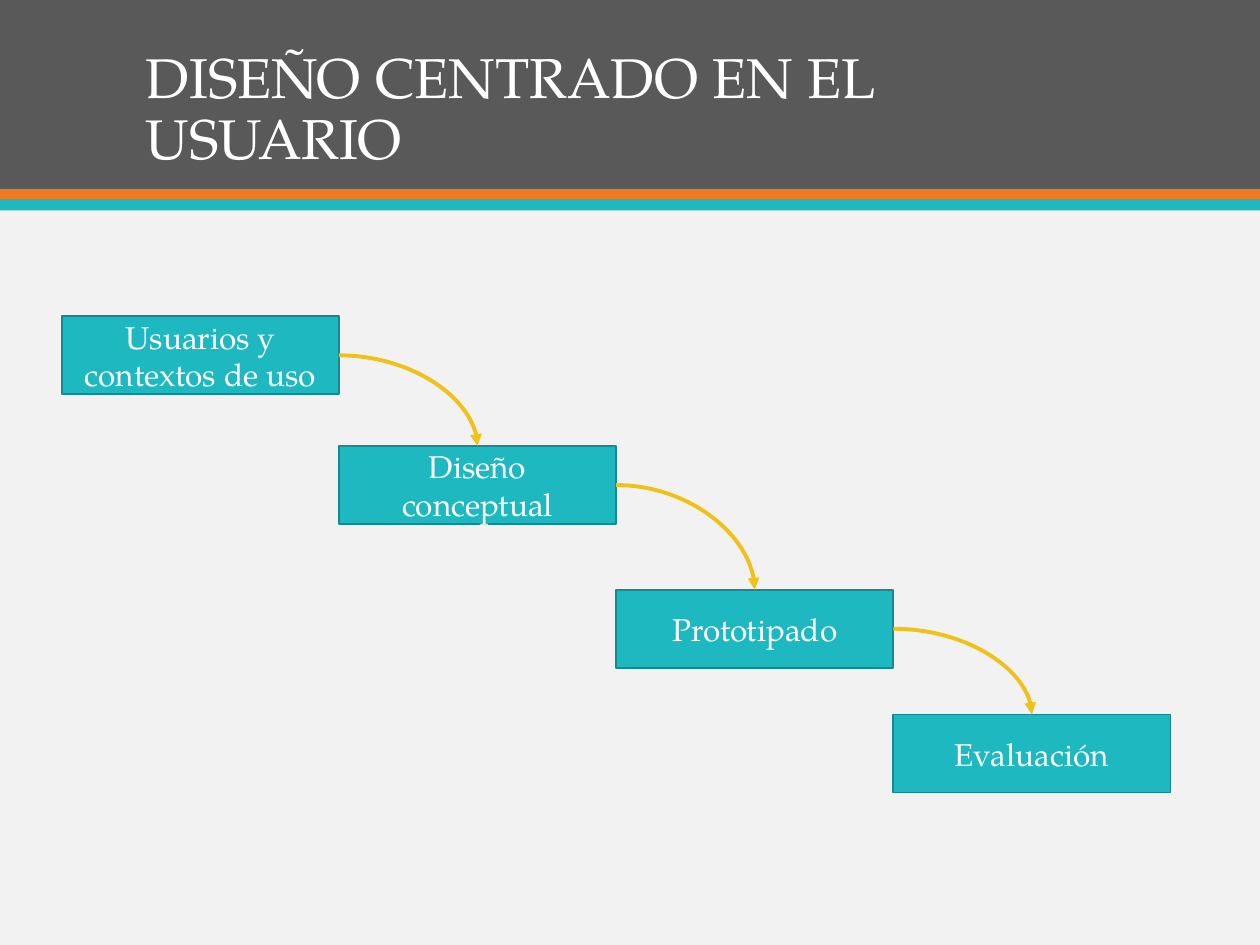
from dataclasses import dataclass
from itertools import pairwise

import pptx
import pptx.dml.color
import pptx.enum.shapes
import pptx.enum.text
import pptx.oxml.ns
import pptx.presentation
import pptx.util
from lxml import etree
from pptx.util import Inches

FONT = "TeX Gyre Pagella"
WHITE, GREY, ORANGE, TEAL = "FFFFFF", "595959", "EF7920", "1EB8C1"
DARK_TEAL, YELLOW, BACKGROUND = "16888F", "EFC119", "F2F2F2"
STEP_LEFT, STEP_WIDTH, STEP_HEIGHT = 0.49, 2.2, 0.62


@dataclass
class Band:
    top: float
    height: float
    color: str


@dataclass
class Step:
    text: str
    top: float


BANDS = [Band(0, 1.5, GREY), Band(1.5, 0.09, ORANGE), Band(1.58, 0.09, TEAL)]
STEPS = [
    Step("Usuarios y contextos de uso", 2.51),
    Step("Diseño conceptual", 3.54),
    Step("Prototipado", 4.68),
    Step("Evaluación", 5.67),
]


def rgb(color: str) -> pptx.dml.color.RGBColor:
    return pptx.dml.color.RGBColor.from_string(color)


def write(sp, text: str, size: float, anchor, paragraph_format: dict) -> None:
    tf = sp.text_frame
    tf.word_wrap = True
    tf.vertical_anchor = anchor
    p = tf.paragraphs[0]
    for name, value in paragraph_format.items():
        setattr(p, name, value)
    r = p.add_run()
    r.text = text
    for name, value in {"name": FONT, "size": pptx.util.Pt(size)}.items():
        setattr(r.font, name, value)
    r.font.color.rgb = rgb(WHITE)


def add_rect(s, left: float, top: float, width: float, height: float, fill: str):
    sp = s.shapes.add_shape(
        pptx.enum.shapes.MSO_SHAPE.RECTANGLE,
        Inches(left), Inches(top), Inches(width), Inches(height))
    sp.shadow.inherit = False
    sp.fill.solid()
    sp.fill.fore_color.rgb = rgb(fill)
    sp.line.fill.background()
    return sp


def add_title(s, text: str) -> None:
    sp = s.shapes.add_textbox(Inches(1.06), Inches(0.28), Inches(7.88), Inches(1.13))
    write(sp, text, 32, pptx.enum.text.MSO_ANCHOR.BOTTOM, {"line_spacing": 0.9})


def add_step(s, index: int, step: Step):
    sp = add_rect(s, STEP_LEFT + index * STEP_WIDTH, step.top,
                  STEP_WIDTH, STEP_HEIGHT, TEAL)
    sp.line.color.rgb = rgb(DARK_TEAL)
    sp.line.width = pptx.util.Pt(1)
    write(sp, step.text, 18, pptx.enum.text.MSO_ANCHOR.MIDDLE,
          {"alignment": pptx.enum.text.PP_ALIGN.CENTER})
    return sp


def add_arrow(s, source, target) -> None:
    """Curve from the right side of source to the top of target."""
    c = s.shapes.add_connector(pptx.enum.shapes.MSO_CONNECTOR.CURVE, 0, 0, 0, 0)
    c.begin_connect(source, 3)
    c.end_connect(target, 0)
    c.line.color.rgb = rgb(YELLOW)
    c.line.width = pptx.util.Pt(2.25)
    qn = pptx.oxml.ns.qn
    properties = c._element.spPr
    properties.find(qn("a:prstGeom")).set("prst", "curvedConnector2")
    etree.SubElement(properties.find(qn("a:ln")), qn("a:tailEnd"), type="triangle")
    etree.SubElement(properties, qn("a:effectLst"))


def build() -> pptx.presentation.Presentation:
    prs = pptx.Presentation()
    prs.slide_width, prs.slide_height = Inches(10), Inches(7.5)
    s = prs.slides.add_slide(prs.slide_layouts[6])
    s.background.fill.solid()
    s.background.fill.fore_color.rgb = rgb(BACKGROUND)
    for band in BANDS:
        add_rect(s, 0, band.top, 10, band.height, band.color)
    add_title(s, "DISEÑO CENTRADO EN EL USUARIO")
    boxes = [add_step(s, i, step) for i, step in enumerate(STEPS)]
    for source, target in pairwise(boxes):
        add_arrow(s, source, target)
    return prs


if __name__ == "__main__":
    build().save("out.pptx")
